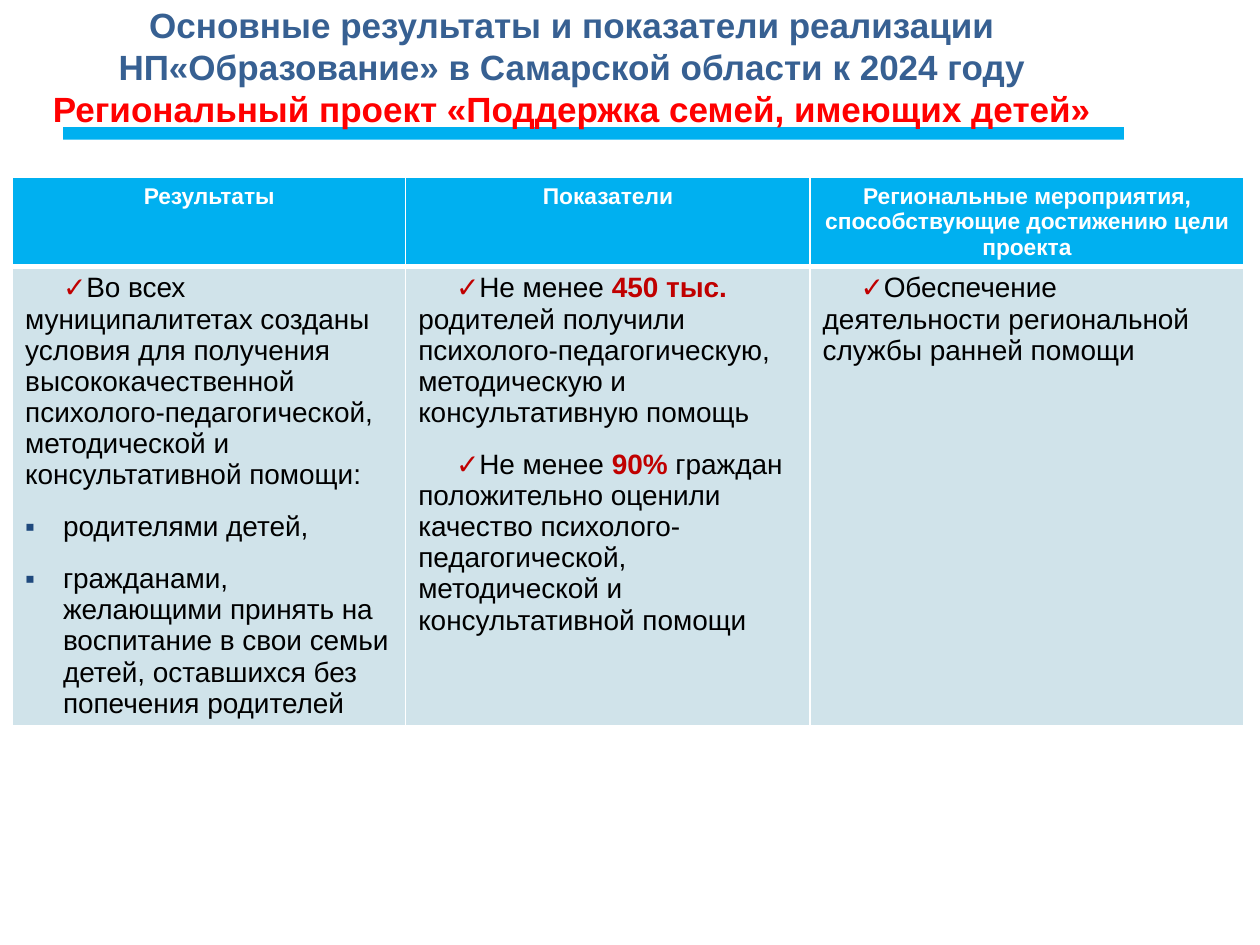
"""Build a slide with the results and indicators of a regional family support project."""
import pptx
import pptx.dml.color
import pptx.enum.shapes
import pptx.enum.text
import pptx.oxml
import pptx.oxml.ns
import pptx.util

Inches = pptx.util.Inches
Pt = pptx.util.Pt
color = pptx.dml.color.RGBColor.from_string
CENTER = pptx.enum.text.PP_ALIGN.CENTER

THEME = {
    "font": "Arial",
    "accent": "00B0F0",
    "body_fill": "D0E3EA",
    "border": "FFFFFF",
    "square": "1F497D",
    "check": "C00000",
    "title": {"size": Pt(20), "bold": True, "color": "376092"},
    "project": {"size": Pt(20), "bold": True, "color": "FF0000"},
    "header": {"size": Pt(13), "bold": True, "color": "FFFFFF"},
    "body": {"size": Pt(16), "bold": False, "color": "000000"},
    "strong": {"size": Pt(16), "bold": True, "color": "C00000"},
}
BULLETS = {
    "✓": {"marL": 0, "indent": Inches(0.3), "color": THEME["check"]},
    "▪": {"marL": Inches(0.3), "indent": Inches(-0.3), "color": THEME["square"]},
}
TITLE = [
    ("title", "Основные результаты и показатели реализации НП«Образование» в Самарской области к 2024 году"),
    ("project", "Региональный проект «Поддержка семей, имеющих детей»"),
]
COLUMNS = [
    {"width": 3.12, "header": "Результаты", "items": [
        ("✓", [("body", "Во всех муниципалитетах созданы условия для получения высококачественной "
                        "психолого-педагогической, методической и консультативной помощи:")]),
        ("▪", [("body", "родителями детей,")]),
        ("▪", [("body", "гражданами, желающими принять на воспитание в свои семьи детей, "
                        "оставшихся без попечения родителей")]),
    ]},
    {"width": 3.21, "header": "Показатели", "items": [
        ("✓", [("body", "Не менее "), ("strong", "450 тыс. "),
               ("body", "родителей получили психолого-педагогическую, методическую и "
                        "консультативную помощь")]),
        ("✓", [("body", "Не менее "), ("strong", "90% "),
               ("body", "граждан положительно оценили качество психолого-педагогической, "
                        "методической и консультативной помощи")]),
    ]},
    {"width": 3.44,
     "header": "Региональные мероприятия, способствующие достижению цели проекта",
     "items": [("✓", [("body", "Обеспечение деятельности региональной службы ранней помощи")])]},
]
ROW_HEIGHTS = [0.69, 3.64]


def add_span(para, style, text):
    span = para.add_run()
    span.text = text
    span.font.name = THEME["font"]
    for name, value in THEME[style].items():
        if name == "color":
            span.font.color.rgb = color(value)
        else:
            setattr(span.font, name, value)


def style_cell(cell, fill, widths):
    properties = cell._tc.get_or_add_tcPr()
    for side, width in zip("LRTB", widths):
        properties.append(pptx.oxml.parse_xml(
            f'<a:ln{side} {pptx.oxml.ns.nsdecls("a")} w="{Pt(width)}"><a:solidFill>'
            f'<a:srgbClr val="{THEME["border"]}"/></a:solidFill></a:ln{side}>'))
    cell.fill.solid()
    cell.fill.fore_color.rgb = color(fill)


deck = pptx.Presentation()
deck.slide_width, deck.slide_height = Inches(10), Inches(7.5)
page = deck.slides.add_slide(deck.slide_layouts[5])

bar = page.shapes.add_shape(pptx.enum.shapes.MSO_SHAPE.RECTANGLE,
                            Inches(0.5), Inches(1.01), Inches(8.42), Inches(0.1))
bar.shadow.inherit = False
bar.fill.solid()
bar.fill.fore_color.rgb = color(THEME["accent"])
bar.line.fill.background()

table = page.shapes.add_table(len(ROW_HEIGHTS), len(COLUMNS), Inches(0.1), Inches(1.41),
                              Inches(sum(column["width"] for column in COLUMNS)),
                              Inches(sum(ROW_HEIGHTS))).table
for row, height in zip(table.rows, ROW_HEIGHTS):
    row.height = Inches(height)

for index, column in enumerate(COLUMNS):
    table.columns[index].width = Inches(column["width"])
    header, body = table.cell(0, index), table.cell(1, index)
    style_cell(header, THEME["accent"], (1, 1, 1, 3))
    style_cell(body, THEME["body_fill"], (1, 1, 3, 1))
    para = header.text_frame.paragraphs[0]
    para.alignment = CENTER
    add_span(para, "header", column["header"])
    for position, (mark, spans) in enumerate(column["items"]):
        para = body.text_frame.add_paragraph() if position else body.text_frame.paragraphs[0]
        bullet = BULLETS[mark]
        properties = para._p.get_or_add_pPr()
        for name in ("marL", "indent"):
            properties.set(name, str(int(bullet[name])))
        for element in (f'buClr {{}}><a:srgbClr val="{bullet["color"]}"/></a:buClr>',
                        f'buFont {{}} typeface="{THEME["font"]}"/>',
                        f'buChar {{}} char="{mark}"/>'):
            properties.append(pptx.oxml.parse_xml("<a:" + element.format(pptx.oxml.ns.nsdecls("a"))))
        para.space_before = Pt(12 if position else 0)
        for style, text in spans:
            add_span(para, style, text)

title = page.shapes.title
page.shapes._spTree.append(title._element)
for name, value in {"left": 0, "top": -0.01, "width": 9.08, "height": 1.07}.items():
    setattr(title, name, Inches(value))
frame = title.text_frame
for name, value in {"word_wrap": True, "auto_size": pptx.enum.text.MSO_AUTO_SIZE.NONE,
                    "vertical_anchor": pptx.enum.text.MSO_ANCHOR.MIDDLE}.items():
    setattr(frame, name, value)
for position, (style, text) in enumerate(TITLE):
    para = frame.add_paragraph() if position else frame.paragraphs[0]
    para.alignment = CENTER
    add_span(para, style, text)

deck.save("out.pptx")
